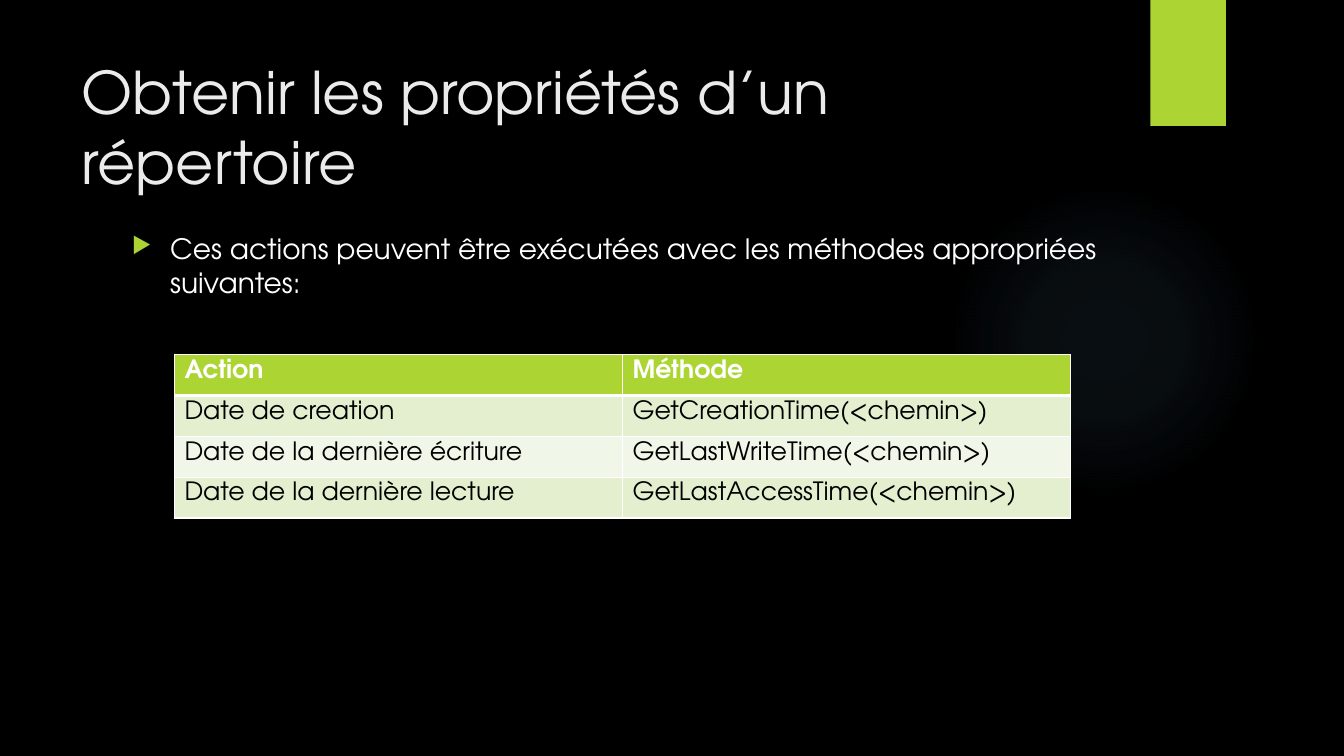
from lxml.etree import SubElement
from pptx import Presentation
from pptx.dml.color import RGBColor
from pptx.enum.shapes import MSO_SHAPE as Shape
from pptx.oxml import parse_xml
from pptx.oxml.ns import nsdecls, qn
from pptx.util import Inches, Pt

FONT = "TeX Gyre Adventor"
GREEN = "ACD433"
WHITE = "FFFFFF"


def color(value):
    return RGBColor.from_string(value)


def add_run(paragraph, text, size, text_color, bold=False):
    run = paragraph.add_run()
    run.text = text
    run.font.name = FONT
    run.font.size = Pt(size)
    run.font.bold = bold
    run.font.color.rgb = color(text_color)


presentation = Presentation()
presentation.slide_width = Inches(13.33)
presentation.slide_height = Inches(7.5)
slide = presentation.slides.add_slide(presentation.slide_layouts[6])
slide.background.fill.solid()
slide.background.fill.fore_color.rgb = color("000000")

glow = slide.shapes.add_shape(
    Shape.OVAL, Inches(9.41), Inches(1.83), Inches(3.08), Inches(3.08))
glow.shadow.inherit = False
glow.line.fill.background()
stops = "".join(
    f'<a:gs pos="{position}000"><a:srgbClr val="7AC4F0">'
    f'<a:alpha val="{alpha}000"/></a:srgbClr></a:gs>'
    for position, alpha in [(0, 7), (36, 6), (69, 0)])
gradient = parse_xml(
    f'<a:gradFill {nsdecls("a")} rotWithShape="1"><a:gsLst>{stops}</a:gsLst>'
    '<a:path path="circle"><a:fillToRect l="50000" t="50000" r="50000" b="50000"/>'
    '</a:path></a:gradFill>')
glow.element.spPr.find(qn("a:prstGeom")).addnext(gradient)

tab = slide.shapes.add_shape(
    Shape.RECTANGLE, Inches(11.41), 0, Inches(0.75), Inches(1.25))
tab.shadow.inherit = False
tab.fill.solid()
tab.fill.fore_color.rgb = color(GREEN)
tab.line.fill.background()

title = slide.shapes.add_textbox(
    Inches(0.71), Inches(0.5), Inches(10.29), Inches(1.53))
title.text_frame.word_wrap = True
add_run(title.text_frame.paragraphs[0],
        "Obtenir les propriétés d’un répertoire", 42, "EBEBEB")

body = slide.shapes.add_textbox(
    Inches(1.21), Inches(2.25), Inches(9.78), Inches(4.59))
body.text_frame.word_wrap = True
paragraph = body.text_frame.paragraphs[0]
properties = paragraph._p.get_or_add_pPr()
properties.set("marL", str(Inches(0.38)))
properties.set("indent", str(Inches(-0.38)))
bullet_color = SubElement(properties, qn("a:buClr"))
SubElement(bullet_color, qn("a:srgbClr"), val=GREEN)
SubElement(properties, qn("a:buSzPct"), val="80000")
SubElement(properties, qn("a:buChar"), char="▶")
add_run(paragraph,
        "Ces actions peuvent être exécutées avec les méthodes appropriées suivantes:",
        20, WHITE)

methods = [
    ("Action", "Méthode"),
    ("Date de creation", "GetCreationTime(<chemin>)"),
    ("Date de la dernière écriture", "GetLastWriteTime(<chemin>)"),
    ("Date de la dernière lecture", "GetLastAccessTime(<chemin>)"),
]
row_fills = [GREEN, "E3EFCE", "F1F7E8", "E3EFCE"]
table = slide.shapes.add_table(
    len(methods), 2, Inches(1.73), Inches(3.52), Inches(8.89), Inches(1.62)).table
for row_index, (texts, row_fill) in enumerate(zip(methods, row_fills)):
    header = row_index == 0
    for column_index, text in enumerate(texts):
        cell = table.cell(row_index, column_index)
        cell.margin_top = cell.margin_bottom = Inches(0.05)
        cell_properties = cell._tc.get_or_add_tcPr()
        for side in "LRTB":
            thick = (header and side == "B") or (row_index == 1 and side == "T")
            border = SubElement(cell_properties, qn(f"a:ln{side}"),
                                w=str(Pt(3 if thick else 1)))
            border_fill = SubElement(border, qn("a:solidFill"))
            SubElement(border_fill, qn("a:srgbClr"), val=WHITE)
        cell.fill.solid()
        cell.fill.fore_color.rgb = color(row_fill)
        add_run(cell.text_frame.paragraphs[0], text, 18,
                WHITE if header else "000000", header)

presentation.save("out.pptx")
